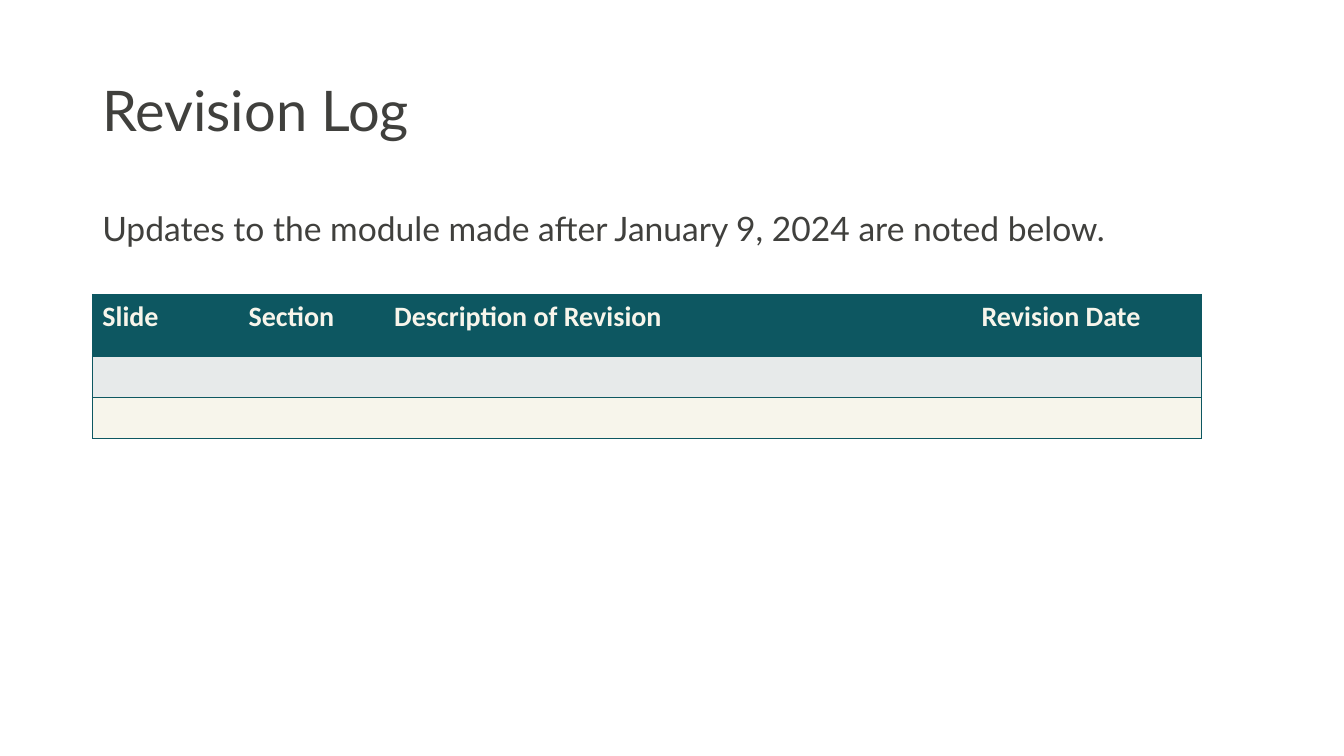
from lxml import etree
from pptx import Presentation
from pptx import util as u
from pptx.dml.color import RGBColor
from pptx.enum import text
from pptx.oxml import ns

INK, TEAL, CREAM, GREY = "40403D", "0D5761", "F7F5EB", "E7EAEA"


def rgb(value):
    return RGBColor.from_string(value)


class Deck:
    """Holds the text style and the current slide."""

    def __init__(self, width, height):
        self.prs = Presentation()
        self.prs.slide_width, self.prs.slide_height = u.Pt(width), u.Pt(height)
        self.s = self.prs.slides.add_slide(self.prs.slide_layouts[6])

    def font(self, p, name, size, color, bold=False):
        f = p.font
        f.name, f.size, f.bold = name, u.Pt(size), bold
        f.color.rgb = rgb(color)

    def text(self, box, words, size, anchor=text.MSO_ANCHOR.TOP):
        tf = self.s.shapes.add_textbox(*map(u.Pt, box)).text_frame
        tf.word_wrap, tf.vertical_anchor = True, anchor
        p = tf.paragraphs[0]
        p.text, p.line_spacing = words, 0.9
        self.font(p, "Lato", size, INK)

    def border(self, cell, side, color):
        tc_pr = cell._tc.get_or_add_tcPr()
        ln = etree.SubElement(tc_pr, ns.qn(f"a:ln{side}"), w=str(u.Pt(1)))
        if color:
            fill = etree.SubElement(ln, ns.qn("a:solidFill"))
            etree.SubElement(fill, ns.qn("a:srgbClr"), val=color)
        else:
            etree.SubElement(ln, ns.qn("a:noFill"))

    def table(self, left, top, widths, heights, headers, fills):
        table = self.s.shapes.add_table(
            len(heights), len(widths), u.Pt(left), u.Pt(top),
            u.Pt(sum(widths)), u.Pt(sum(heights))).table
        table.first_row = table.horz_banding = False
        for column, width in zip(table.columns, widths):
            column.width = u.Pt(width)
        last = len(widths) - 1
        for row, height, fill in zip(table.rows, heights, fills):
            row.height = u.Pt(height)
            for i, cell in enumerate(row.cells):
                # Rules run across each row; only the outer edges are vertical
                self.border(cell, "L", TEAL if i == 0 else None)
                self.border(cell, "R", TEAL if i == last else None)
                self.border(cell, "T", TEAL)
                self.border(cell, "B", TEAL)
                cell.fill.solid()
                cell.fill.fore_color.rgb = rgb(fill)
        for cell, header in zip(table.rows[0].cells, headers):
            p = cell.text_frame.paragraphs[0]
            p.text = header
            self.font(p, "Calibri", 20, CREAM, bold=True)


def main():
    deck = Deck(960, 540)

    # Title and introduction
    deck.text((66, 28.75, 828, 104.4), "Revision Log", 40, text.MSO_ANCHOR.MIDDLE)
    deck.text((66, 148.3, 828, 33.8),
              "Updates to the module made after January 9, 2024 are noted below.", 24)

    # Revision table
    deck.table(66, 210.3, (104.4, 104, 419.6, 164), (44.5, 29.3, 29.3),
               ("Slide", "Section", "Description of Revision", "Revision Date"),
               (TEAL, GREY, CREAM))

    deck.prs.save("out.pptx")


if __name__ == "__main__":
    main()
